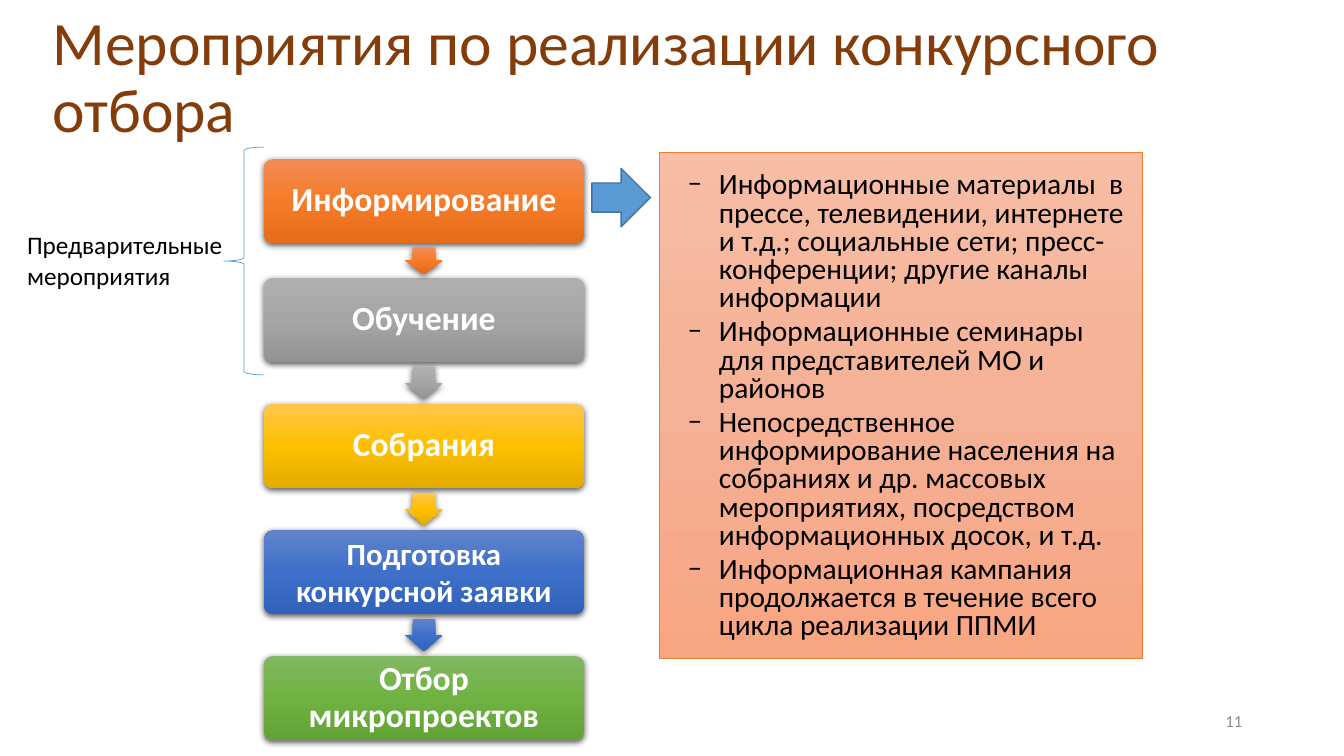
from copy import deepcopy
from dataclasses import dataclass

from lxml.etree import SubElement
from pptx import Presentation
from pptx.dml.color import RGBColor
from pptx.enum.shapes import MSO_SHAPE
from pptx.enum.text import MSO_ANCHOR, MSO_AUTO_SIZE, PP_ALIGN
from pptx.oxml.ns import qn
from pptx.util import Inches, Pt


@dataclass(frozen=True)
class Theme:
    """Colours, font and type sizes of the slide."""

    font: str = "Calibri"
    title: str = "843C0B"
    text: str = "000000"
    on_colour: str = "FFFFFF"
    page: str = "8C8C8C"
    accent: str = "5B9BD5"
    accent_edge: str = "43739E"
    panel_edge: str = "ED7D31"
    panel: tuple = ("F7BDA5", "F5B196", "F8A582")
    orange: tuple = ("F18C57", "F67B28", "E56C19")
    grey: tuple = ("AFAFAF", "A5A5A5", "939393")
    yellow: tuple = ("FFC64B", "FFC000", "E3AB00")
    blue: tuple = ("6183CB", "3E70CA", "3062BB")
    green: tuple = ("81B861", "6FB242", "62A336")
    title_size: int = 44
    step_size: int = 24
    long_step_size: int = 22
    detail_size: int = 21
    note_size: int = 18
    page_size: int = 12


class SlideBuilder:
    """Draws styled elements on one slide."""

    def __init__(self, slide, theme):
        """Keep the slide and its theme."""
        self.slide = slide
        self.theme = theme

    def add_text(self, paragraph, text, size, colour, bold=False, align=PP_ALIGN.LEFT, spacing=1.0):
        """Add one formatted run to a paragraph."""
        paragraph.alignment = align
        paragraph.line_spacing = spacing
        run = paragraph.add_run()
        run.text = text
        run.font.name = self.theme.font
        run.font.size = Pt(size)
        run.font.bold = bold
        run.font.color.rgb = RGBColor.from_string(colour)

    def frame(self, shape, insets, anchor):
        """Set wrapping, insets and anchor of a text frame."""
        text_frame = shape.text_frame
        text_frame.word_wrap = True
        text_frame.auto_size = MSO_AUTO_SIZE.NONE
        text_frame.vertical_anchor = anchor
        (text_frame.margin_left, text_frame.margin_top,
         text_frame.margin_right, text_frame.margin_bottom) = map(Inches, insets)
        return text_frame

    def title(self, text, box):
        """Place and fill the title placeholder."""
        heading = self.slide.shapes.title
        heading.left, heading.top, heading.width, heading.height = map(Inches, box)
        frame = self.frame(heading, (0.1, 0.05, 0.1, 0.05), MSO_ANCHOR.MIDDLE)
        self.add_text(frame.paragraphs[0], text, self.theme.title_size, self.theme.title, spacing=0.9)

    def label(self, text, box, size, colour, align=PP_ALIGN.LEFT, anchor=MSO_ANCHOR.TOP):
        """Add a plain text box."""
        caption = self.slide.shapes.add_textbox(*map(Inches, box))
        frame = self.frame(caption, (0.1, 0.05, 0.1, 0.05), anchor)
        self.add_text(frame.paragraphs[0], text, size, colour, align=align)

    def shape(self, kind, box, fill=None, line=None, width=0.5, adjustments=(), shadow=False):
        """Add a preset shape with a plain colour, a gradient or no fill."""
        shape = self.slide.shapes.add_shape(kind, *map(Inches, box))
        for index, value in enumerate(adjustments):
            shape.adjustments[index] = value
        if fill is None:
            shape.fill.background()
        elif isinstance(fill, str):
            shape.fill.solid()
            shape.fill.fore_color.rgb = RGBColor.from_string(fill)
        else:
            self.gradient(shape, fill)
        if line:
            shape.line.color.rgb = RGBColor.from_string(line)
            shape.line.width = Pt(width)
        else:
            shape.line.fill.background()
        shape.shadow.inherit = False
        if shadow:
            self.cast_shadow(shape)
        return shape

    def gradient(self, shape, colours):
        """Fill a shape with evenly spaced colours from top to bottom."""
        shape.fill.gradient()
        shape.fill.gradient_angle = 270
        stops = shape.element.spPr.find(qn("a:gradFill")).find(qn("a:gsLst"))
        stops.insert(1, deepcopy(stops[0]))
        for index, (stop, colour) in enumerate(zip(shape.fill.gradient_stops, colours)):
            stop.position = index / (len(colours) - 1)
            stop.color.rgb = RGBColor.from_string(colour)

    def cast_shadow(self, shape):
        """Add a soft shadow below a shape."""
        effects = shape.element.spPr.find(qn("a:effectLst"))
        outer = SubElement(effects, qn("a:outerShdw"), blurRad=str(Pt(4.5)), dist=str(Pt(1.5)),
                           dir="5400000", algn="ctr", rotWithShape="0")
        black = SubElement(outer, qn("a:srgbClr"), val=self.theme.text)
        SubElement(black, qn("a:alpha"), val="63000")

    def step(self, text, box, colours, size, spacing):
        """Add a rounded box naming one step."""
        card = self.shape(MSO_SHAPE.ROUNDED_RECTANGLE, box, colours, adjustments=(0.1,), shadow=True)
        frame = self.frame(card, (0.12,) * 4, MSO_ANCHOR.MIDDLE)
        self.add_text(frame.paragraphs[0], text, size, self.theme.on_colour, True, PP_ALIGN.CENTER, spacing)

    def details(self, items, box):
        """Add the panel with a dashed list."""
        panel = self.shape(MSO_SHAPE.RECTANGLE, box, self.theme.panel, self.theme.panel_edge)
        frame = self.frame(panel, (0, 0.2, 0.1, 0.05), MSO_ANCHOR.TOP)
        for index, item in enumerate(items):
            paragraph = frame.add_paragraph() if index else frame.paragraphs[0]
            paragraph.level = 1
            self.add_text(paragraph, item, self.theme.detail_size, self.theme.text, spacing=0.8)
            paragraph.space_before = Pt(4.2)
            properties = paragraph._p.get_or_add_pPr()
            properties.set("marL", str(Inches(0.59)))
            properties.set("indent", str(Inches(-0.31)))
            SubElement(properties, qn("a:buFont"), typeface=self.theme.font)
            SubElement(properties, qn("a:buChar"), char="–")


def main():
    """Build and save the slide."""
    deck = Presentation()
    deck.slide_width, deck.slide_height = Inches(13.33), Inches(7.5)
    theme = Theme()
    builder = SlideBuilder(deck.slides.add_slide(deck.slide_layouts[5]), theme)

    builder.title("Мероприятия по реализации конкурсного отбора", (0.42, 0.06, 11.5, 1.45))
    builder.label("11", (9.42, 6.95, 3, 0.4), theme.page_size, theme.page,
                  PP_ALIGN.RIGHT, MSO_ANCHOR.MIDDLE)

    steps = [
        ("Информирование", theme.orange, theme.step_size, 0.9),
        ("Обучение", theme.grey, theme.step_size, 0.9),
        ("Собрания", theme.yellow, theme.step_size, 0.9),
        ("Подготовка конкурсной заявки", theme.blue, theme.long_step_size, 1.0),
        ("Отбор микропроектов", theme.green, theme.step_size, 0.9),
    ]
    left, width, height, arrow_width = 2.62, 3.17, 0.83, 0.37
    tops = [1.58] + [2.76 + 1.25 * index for index in range(len(steps) - 1)]
    for (text, colours, size, spacing), top in zip(steps, tops):
        builder.step(text, (left, top, width, height), colours, size, spacing)
    for (_, colours, _, _), top, next_top in zip(steps, tops, tops[1:]):
        gap = next_top - top - height
        arrow_box = (left + (width - arrow_width) / 2, top + height + gap / 8, arrow_width, gap * 0.75)
        builder.shape(MSO_SHAPE.DOWN_ARROW, arrow_box, colours, adjustments=(0.6, 0.5), shadow=True)

    builder.details([
        "Информационные материалы  в прессе, телевидении, интернете и т.д.; "
        "социальные сети; пресс-конференции; другие каналы информации",
        "Информационные семинары для представителей МО и районов",
        "Непосредственное информирование населения на собраниях и др. массовых "
        "мероприятиях, посредством информационных досок, и т.д.",
        "Информационная кампания продолжается в течение всего цикла реализации ППМИ",
    ], (6.54, 1.51, 4.79, 5.02))
    builder.shape(MSO_SHAPE.RIGHT_ARROW, (5.87, 1.67, 0.58, 0.58), theme.accent, theme.accent_edge, 1)
    builder.shape(MSO_SHAPE.LEFT_BRACE, (2.22, 1.46, 0.4, 2.26), line=theme.accent)
    builder.label("Предварительные мероприятия", (0.17, 2.23, 2.38, 0.71), theme.note_size, theme.text)

    deck.save("out.pptx")


if __name__ == "__main__":
    main()
